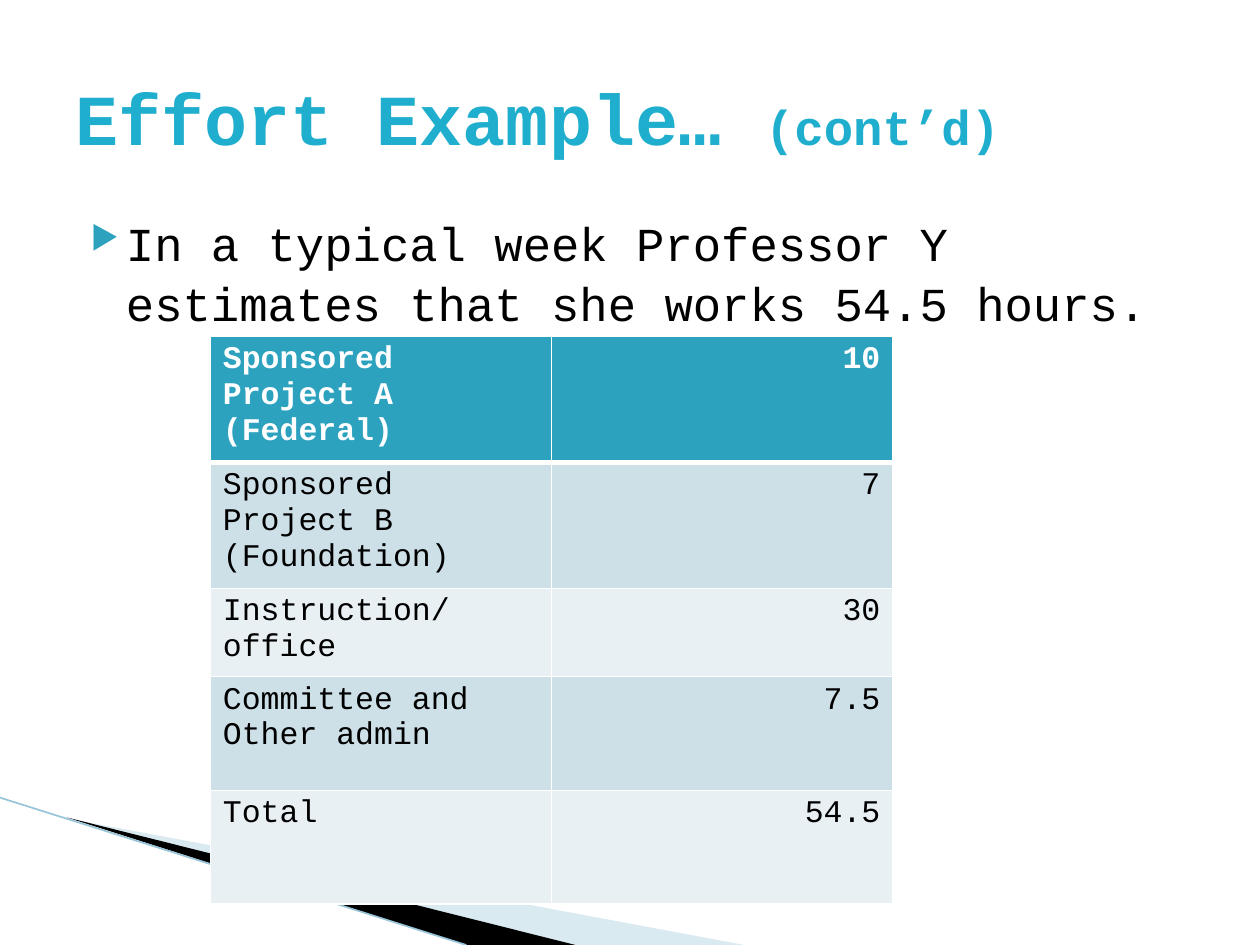
from lxml import etree
from pptx import Presentation
from pptx.dml.color import RGBColor
from pptx.enum.shapes import MSO_CONNECTOR
from pptx.enum.text import MSO_ANCHOR, MSO_AUTO_SIZE, PP_ALIGN
from pptx.oxml.ns import qn
from pptx.util import Cm, Pt

LEFT, RIGHT = PP_ALIGN.LEFT, PP_ALIGN.RIGHT
MIDDLE = MSO_ANCHOR.MIDDLE
NO_AUTOFIT = MSO_AUTO_SIZE.NONE
STRAIGHT = MSO_CONNECTOR.STRAIGHT

FONT = "Courier New"
COLORS = {
    "title": "1FAECD", "text": "000000", "white": "FFFFFF", "accent": "2DA2BF",
    "dark_band": "CDE0E8", "light_band": "E8F0F4",
    "pale_wedge": "A0CBDC", "black_wedge": "000000", "edge": "97C5D8",
}

TITLE = [("Effort Example… ", 41), ("(cont’d)", 28)]
BODY = "In a typical week Professor Y estimates that she works 54.5 hours."
# Lines of the label, hours, row height in cm
EFFORT_ROWS = [
    (["Sponsored Project A", "(Federal)"], "10", 2.0),
    (["Sponsored Project B", "(Foundation)"], "7", 1.6),
    (["Instruction/office"], "30", 1.57),
    (["Committee and Other admin"], "7.5", 2.29),
    (["Total"], "54.5", 2.29),
]
COLUMN_WIDTH = 6.88

# Corner points in cm, fill, opacity in percent
WEDGES = [
    ([(1.4, 16.51), (15.0, 19.05), (11.58, 19.05)], "pale_wedge", 40),
    ([(1.35, 16.48), (11.6, 19.05), (9.4, 19.05)], "black_wedge", 100),
]
EDGE = (0, 16.08, 9.4, 19.05)


def rgb(name):
    return RGBColor.from_string(COLORS[name])


def add_text(paragraph, text, size=18, color="text", bold=False, align=LEFT):
    paragraph.alignment = align
    run = paragraph.add_run()
    run.text = text
    run.font.name = FONT
    run.font.size = Pt(size)
    run.font.bold = bold
    run.font.color.rgb = rgb(color)


def add_bullet(paragraph, character, color, percent):
    properties = paragraph._p.get_or_add_pPr()
    properties.set("marL", str(Cm(1.02)))
    properties.set("indent", str(-Cm(0.71)))
    bullet_color = etree.SubElement(properties, qn("a:buClr"))
    etree.SubElement(bullet_color, qn("a:srgbClr"), val=COLORS[color])
    etree.SubElement(properties, qn("a:buSzPct"), val=str(percent * 1000))
    etree.SubElement(properties, qn("a:buChar"), char=character)


def set_borders(cell, bottom_width):
    """Draw white cell borders; they must precede the fill in the XML."""
    properties = cell._tc.get_or_add_tcPr()
    for side, width in (("L", 1), ("R", 1), ("T", 1), ("B", bottom_width)):
        line = etree.SubElement(properties, qn(f"a:ln{side}"), w=str(Pt(width)))
        fill = etree.SubElement(line, qn("a:solidFill"))
        etree.SubElement(fill, qn("a:srgbClr"), val=COLORS["white"])


def add_wedge(slide, points, color, opacity):
    corners = [(Cm(x), Cm(y)) for x, y in points]
    builder = slide.shapes.build_freeform(*corners[0])
    builder.add_line_segments(corners[1:], close=True)
    shape = builder.convert_to_shape()
    shape.shadow.inherit = False
    shape.line.fill.background()
    shape.fill.solid()
    shape.fill.fore_color.rgb = rgb(color)
    if opacity < 100:
        fill_color = shape._element.spPr.find(".//" + qn("a:srgbClr"))
        etree.SubElement(fill_color, qn("a:alpha"), val=str(opacity * 1000))


def add_edge(slide):
    connector = slide.shapes.add_connector(STRAIGHT, *map(Cm, EDGE))
    connector.line.color.rgb = rgb("edge")
    connector.line.width = Pt(0.95)
    etree.SubElement(connector._element.spPr, qn("a:effectLst"))


def add_title(slide):
    title = slide.shapes.title
    title.left, title.top, title.width, title.height = map(Cm, (1.27, 0.76, 22.86, 3.18))
    frame = title.text_frame
    frame.auto_size = NO_AUTOFIT
    frame.word_wrap = True
    frame.vertical_anchor = MIDDLE
    for text, size in TITLE:
        add_text(frame.paragraphs[0], text, size=size, color="title", bold=True)


def add_body(slide):
    frame = slide.shapes.add_textbox(*map(Cm, (1.27, 4.11, 22.86, 12.57))).text_frame
    frame.word_wrap = True
    paragraph = frame.paragraphs[0]
    paragraph.line_spacing = 1.07
    add_bullet(paragraph, "▶", "accent", 68)
    add_text(paragraph, BODY, size=27)


def add_effort_table(slide):
    height = sum(row[2] for row in EFFORT_ROWS)
    table = slide.shapes.add_table(
        len(EFFORT_ROWS), 2, Cm(4.24), Cm(6.78), Cm(2 * COLUMN_WIDTH), Cm(height)).table
    for column in table.columns:
        column.width = Cm(COLUMN_WIDTH)
    for index, (label, hours, row_height) in enumerate(EFFORT_ROWS):
        header = index == 0
        band = "accent" if header else ("light_band", "dark_band")[index % 2]
        table.rows[index].height = Cm(row_height)
        for column, (lines, align) in enumerate(((label, LEFT), ([hours], RIGHT))):
            cell = table.cell(index, column)
            set_borders(cell, bottom_width=3 if header else 1)
            cell.fill.solid()
            cell.fill.fore_color.rgb = rgb(band)
            frame = cell.text_frame
            for number, text in enumerate(lines):
                paragraph = frame.add_paragraph() if number else frame.paragraphs[0]
                add_text(paragraph, text, color="white" if header else "text",
                         bold=header, align=align)


def main():
    presentation = Presentation()
    presentation.slide_width, presentation.slide_height = Cm(25.4), Cm(19.05)
    slide = presentation.slides.add_slide(presentation.slide_layouts[5])
    for wedge in WEDGES:
        add_wedge(slide, *wedge)
    add_edge(slide)
    add_title(slide)
    add_body(slide)
    add_effort_table(slide)
    presentation.save("out.pptx")


if __name__ == "__main__":
    main()
